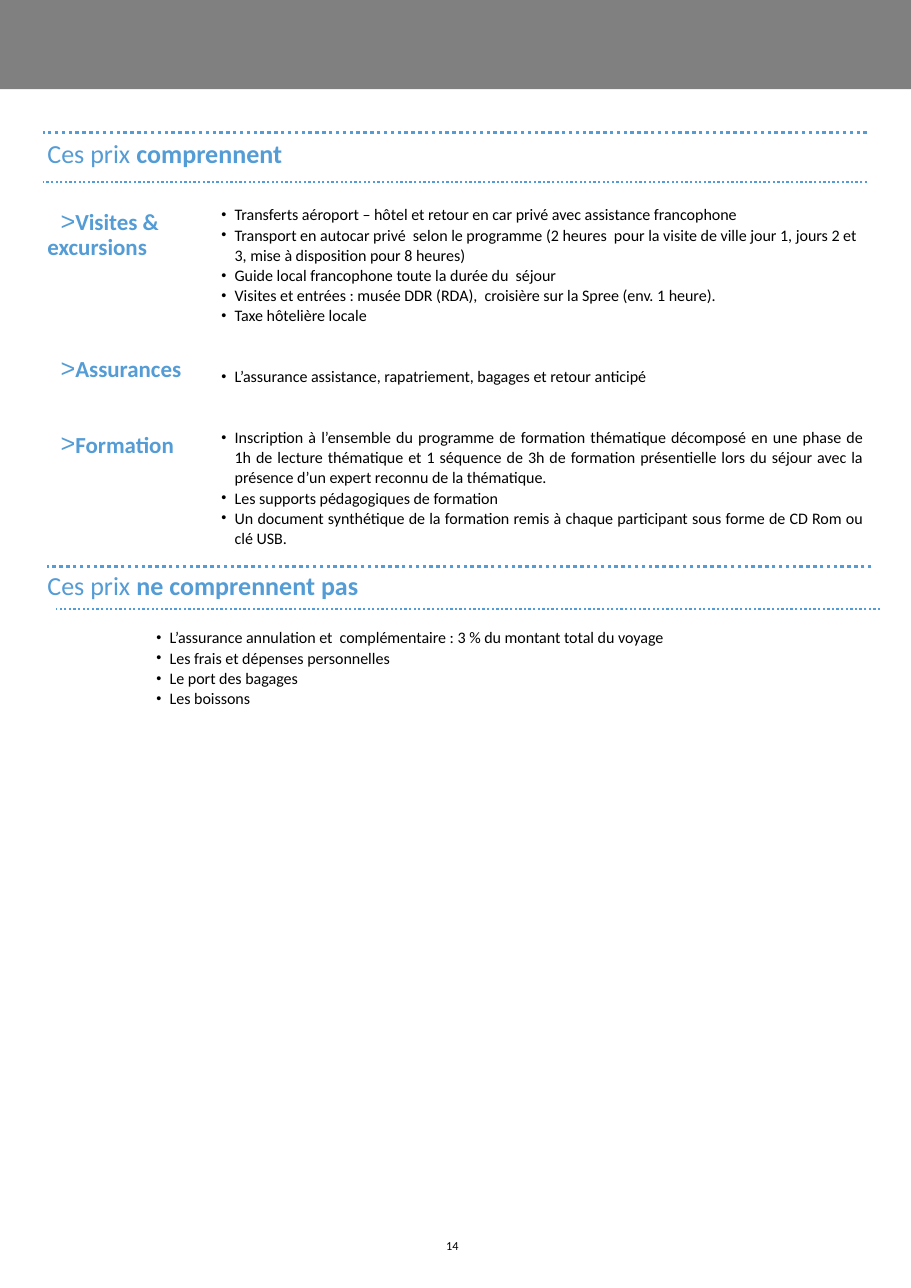
import dataclasses

import lxml.etree
import pptx
import pptx.dml.color
import pptx.enum.dml
import pptx.enum.shapes
import pptx.enum.text
import pptx.oxml.ns
import pptx.util

Inches = pptx.util.Inches
Pt = pptx.util.Pt
Align = pptx.enum.text.PP_ALIGN
Anchor = pptx.enum.text.MSO_ANCHOR
qn = pptx.oxml.ns.qn


@dataclasses.dataclass(frozen=True)
class Theme:
    font: str = "Calibri"
    accent: str = "549CD5"
    ink: str = "000000"
    band: str = "808080"
    heading: float = 17
    label: float = 15
    item: float = 10.5
    page: float = 8
    thick_rule: float = 2.25
    thin_rule: float = 1.5


THEME = Theme()
VISITS = [
    "Transferts aéroport – hôtel et retour en car privé avec assistance francophone",
    "Transport en autocar privé  selon le programme (2 heures  pour la visite de ville "
    "jour 1, jours 2 et 3, mise à disposition pour 8 heures)",
    "Guide local francophone toute la durée du  séjour",
    "Visites et entrées : musée DDR (RDA),  croisière sur la Spree (env. 1 heure).",
    "Taxe hôtelière locale",
]
INSURANCE = ["L’assurance assistance, rapatriement, bagages et retour anticipé"]
TRAINING = [
    "Inscription à l’ensemble du programme de formation thématique décomposé en une phase "
    "de 1h de lecture thématique et 1 séquence de 3h de formation présentielle lors du "
    "séjour avec la présence d’un expert reconnu de la thématique.",
    "Les supports pédagogiques de formation",
    "Un document synthétique de la formation remis à chaque participant sous forme de "
    "CD Rom ou clé USB.",
]
EXCLUDED = [
    "L’assurance annulation et  complémentaire : 3 % du montant total du voyage",
    "Les frais et dépenses personnelles",
    "Le port des bagages",
    "Les boissons",
]
LABELS = [("Visites & excursions", 0), ("Assurances", 64), ("Formation", 33)]
GROUP_GAP = 26.5


def color(value):
    return pptx.dml.color.RGBColor.from_string(value)


def place(holder, left, top, width, height, anchor=Anchor.TOP, right_inset=0.04):
    holder.left, holder.top = Inches(left), Inches(top)
    holder.width, holder.height = Inches(width), Inches(height)
    frame = holder.text_frame
    frame.auto_size = pptx.enum.text.MSO_AUTO_SIZE.NONE
    frame.word_wrap = True
    frame.vertical_anchor = anchor
    frame.margin_left, frame.margin_right = Inches(0.04), Inches(right_inset)
    frame.margin_top = frame.margin_bottom = 0
    return frame


def add_run(paragraph, text, size, ink, bold=False):
    run = paragraph.add_run()
    run.text = text
    run.font.name = THEME.font
    run.font.size = Pt(size)
    run.font.bold = bold
    run.font.color.rgb = color(ink)


def set_bullet(paragraph, char, percent, margin, indent):
    properties = paragraph._p.get_or_add_pPr()
    properties.set("marL", str(Inches(margin)))
    properties.set("indent", str(Inches(indent)))
    for tag, key, value in (
        ("a:buSzPct", "val", str(percent * 1000)),
        ("a:buFont", "typeface", "Arial"),
        ("a:buChar", "char", char),
    ):
        lxml.etree.SubElement(properties, qn(tag)).set(key, value)


def set_spacing(paragraph, line, before=0, align=Align.LEFT):
    paragraph.line_spacing = line
    paragraph.space_before = Pt(before)
    paragraph.space_after = Pt(0)
    paragraph.alignment = align


def next_paragraph(frame):
    first = frame.paragraphs[0]
    return frame.add_paragraph() if first.runs else first


def fill_heading(holder, top, strong):
    frame = place(holder, 0.39, top, 7.48, 0.39, Anchor.MIDDLE)
    paragraph = frame.paragraphs[0]
    set_spacing(paragraph, 0.8)
    add_run(paragraph, "Ces prix ", THEME.heading, THEME.accent)
    add_run(paragraph, strong, THEME.heading, THEME.accent, True)


def fill_labels(frame):
    for label, gap in LABELS:
        paragraph = next_paragraph(frame)
        set_bullet(paragraph, ">", 110, 0, 0.12)
        set_spacing(paragraph, 0.9, gap)
        add_run(paragraph, label, THEME.label, THEME.accent, True)


def add_items(frame, items, gap=0, align=Align.LEFT):
    for index, item in enumerate(items):
        paragraph = next_paragraph(frame)
        set_bullet(paragraph, "•", 90, 0.12, -0.12)
        set_spacing(paragraph, 1.05, 0 if index else gap, align)
        add_run(paragraph, item, THEME.item, THEME.ink)


def add_rule(slide, left, top, weight):
    rule = slide.shapes.add_connector(
        pptx.enum.shapes.MSO_CONNECTOR.STRAIGHT,
        Inches(left + 7.48), Inches(top), Inches(left), Inches(top))
    rule.line.color.rgb = color(THEME.accent)
    rule.line.width = Pt(weight)
    rule.line.dash_style = pptx.enum.dml.MSO_LINE.ROUND_DOT
    lxml.etree.SubElement(rule._element.spPr, qn("a:effectLst"))


def add_band(slide, width):
    band = slide.shapes.add_shape(
        pptx.enum.shapes.MSO_SHAPE.RECTANGLE, 0, 0, width, Inches(0.81))
    band.shadow.inherit = False
    band.fill.solid()
    band.fill.fore_color.rgb = color(THEME.band)
    band.line.fill.background()


def add_page_number(slide, number):
    page = slide.shapes.add_textbox(0, 0, 0, 0)
    frame = place(page, 4.01, 11.24, 0.27, 0.13)
    frame.word_wrap = False
    add_run(frame.paragraphs[0], number, THEME.page, THEME.ink)


def main():
    deck = pptx.Presentation()
    deck.slide_width, deck.slide_height = Inches(8.27), Inches(11.69)
    slide = deck.slides.add_slide(deck.slide_layouts.get_by_name("Comparison"))
    included_title, excluded_title, included, labels, excluded = slide.placeholders

    add_page_number(slide, "14")
    add_band(slide, deck.slide_width)
    fill_heading(included_title, 1.22, "comprennent")
    fill_heading(excluded_title, 5.14, "ne comprennent pas")
    fill_labels(place(labels, 0.39, 1.91, 1.5, 2.35, right_inset=0))

    included_frame = place(included, 1.97, 1.85, 5.91, 2.42)
    add_items(included_frame, VISITS)
    add_items(included_frame, INSURANCE, GROUP_GAP)
    add_items(included_frame, TRAINING, GROUP_GAP, Align.JUSTIFY)
    add_items(place(excluded, 1.38, 5.69, 6.5, 2.68), EXCLUDED)

    for left, top, weight in (
        (0.39, 1.2, THEME.thick_rule),
        (0.39, 1.65, THEME.thin_rule),
        (0.43, 5.14, THEME.thick_rule),
        (0.51, 5.53, THEME.thin_rule),
    ):
        add_rule(slide, left, top, weight)

    deck.save("out.pptx")


if __name__ == "__main__":
    main()
